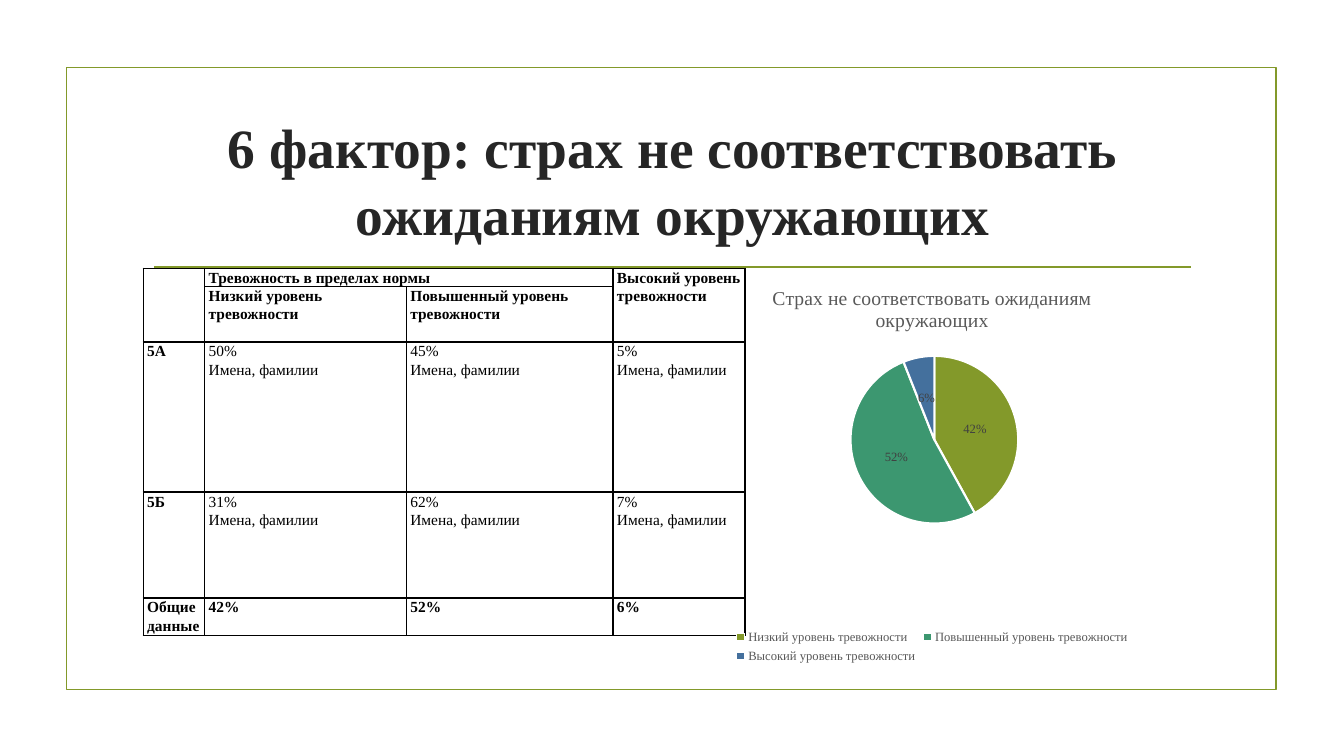
import pptx
import pptx.chart.data
import pptx.dml.color
import pptx.enum.chart
import pptx.enum.shapes
import pptx.enum.text
import pptx.oxml
import pptx.oxml.ns
import pptx.util
from pptx.util import Inches

RGBColor = pptx.dml.color.RGBColor
OLIVE = RGBColor(0x83, 0x99, 0x2A)
GREEN = RGBColor(0x3C, 0x97, 0x70)
BLUE = RGBColor(0x44, 0x70, 0x9D)
TITLE_COLOR = RGBColor(0x26, 0x26, 0x26)
CHART_TEXT = RGBColor(0x59, 0x59, 0x59)
LABEL_TEXT = RGBColor(0x40, 0x40, 0x40)
BLACK = RGBColor(0, 0, 0)
WHITE = RGBColor(0xFF, 0xFF, 0xFF)
FONT = "Times New Roman"

LOW, RAISED, HIGH = LEVELS = [
    "Низкий уровень тревожности",
    "Повышенный уровень тревожности",
    "Высокий уровень тревожности",
]
NAMES = "Имена, фамилии"
TABLE_ROWS = [
    ["", "Тревожность в пределах нормы", "", HIGH],
    ["", LOW, RAISED, ""],
    ["5А"] + [f"{share}\n{NAMES}" for share in ("50%", "45%", "5%")],
    ["5Б"] + [f"{share}\n{NAMES}" for share in ("31%", "62%", "7%")],
    ["Общие данные", "42%", "52%", "6%"],
]
COLUMN_WIDTHS = [0.61, 2, 2.05, 1.31]
ROW_HEIGHTS = [0.18, 0.55, 1.49, 1.05, 0.37]
CHART_TITLE = "Страх не соответствовать ожиданиям окружающих"


def style_font(font, size, color, bold=False):
    font.name = FONT
    font.size = pptx.util.Pt(size)
    font.bold = bold
    font.color.rgb = color


def add_frame(slide, left, top, width, height):
    """Draw the slide border and the rule under the title."""
    frame = slide.shapes.add_shape(
        pptx.enum.shapes.MSO_SHAPE.RECTANGLE,
        Inches(left), Inches(top), Inches(width), Inches(height))
    frame.shadow.inherit = False
    frame.fill.background()
    rule_y = Inches(top + 1.98)
    rule = slide.shapes.add_connector(
        pptx.enum.shapes.MSO_CONNECTOR.STRAIGHT,
        Inches(left + 0.87), rule_y, Inches(left + width - 0.85), rule_y)
    rule._element.spPr.append(pptx.oxml.parse_xml(
        f'<a:effectLst {pptx.oxml.ns.nsdecls("a")}/>'))
    for shape in (frame, rule):
        shape.line.color.rgb = OLIVE
        shape.line.width = pptx.util.Pt(1.25)


def fill_title(slide, left, top, width, height):
    title = slide.shapes.title
    title.left, title.top = Inches(left), Inches(top)
    title.width, title.height = Inches(width), Inches(height)
    text_frame = title.text_frame
    text_frame.word_wrap = True
    text_frame.auto_size = pptx.enum.text.MSO_AUTO_SIZE.NONE
    text_frame.vertical_anchor = pptx.enum.text.MSO_ANCHOR.MIDDLE
    paragraph = text_frame.paragraphs[0]
    paragraph.alignment = pptx.enum.text.PP_ALIGN.CENTER
    run = paragraph.add_run()
    run.text = "6 фактор: страх не соответствовать ожиданиям окружающих"
    style_font(run.font, 39.6, TITLE_COLOR, bold=True)


def add_cell_borders(cell):
    properties = cell._tc.get_or_add_tcPr()
    for position, side in enumerate(("lnL", "lnR", "lnT", "lnB")):
        properties.insert(position, pptx.oxml.parse_xml(
            f'<a:{side} {pptx.oxml.ns.nsdecls("a")} w="12700"><a:solidFill>'
            f'<a:srgbClr val="{BLACK}"/></a:solidFill></a:{side}>'))


def fill_cell(cell, text, bold):
    cell.margin_left = cell.margin_right = Inches(0.04)
    cell.margin_top = cell.margin_bottom = 0
    cell.fill.background()
    add_cell_borders(cell)
    for index, line in enumerate(text.split("\n")):
        text_frame = cell.text_frame
        paragraph = text_frame.add_paragraph() if index else text_frame.paragraphs[0]
        paragraph.line_spacing = 1.07
        style_font(paragraph.font, 11, BLACK, bold)
        if line:
            run = paragraph.add_run()
            run.text = line
            style_font(run.font, 11, BLACK, bold)


def add_anxiety_table(slide, left, top):
    table = slide.shapes.add_table(
        len(ROW_HEIGHTS), len(COLUMN_WIDTHS), Inches(left), Inches(top),
        Inches(sum(COLUMN_WIDTHS)), Inches(sum(ROW_HEIGHTS))).table
    table.first_row = table.horz_banding = False
    for column, width in zip(table.columns, COLUMN_WIDTHS):
        column.width = Inches(width)
    for row, height in zip(table.rows, ROW_HEIGHTS):
        row.height = Inches(height)
    for row_index, texts in enumerate(TABLE_ROWS):
        for column_index, text in enumerate(texts):
            bold = column_index == 0 or row_index not in (2, 3)
            fill_cell(table.cell(row_index, column_index), text, bold)
    for first, last in (((0, 0), (1, 0)), ((0, 1), (0, 2)), ((0, 3), (1, 3))):
        table.cell(*first).merge(table.cell(*last))


def set_plot_layout(chart, x, y, width, height):
    """Fix the inner plot area, in fractions of the chart."""
    plot_area = chart._chartSpace.chart.plotArea
    for layout in plot_area.findall(pptx.oxml.ns.qn("c:layout")):
        plot_area.remove(layout)
    plot_area.insert(0, pptx.oxml.parse_xml(
        f'<c:layout {pptx.oxml.ns.nsdecls("c")}><c:manualLayout>'
        '<c:layoutTarget val="inner"/><c:xMode val="edge"/><c:yMode val="edge"/>'
        f'<c:x val="{x}"/><c:y val="{y}"/><c:w val="{width}"/><c:h val="{height}"/>'
        '</c:manualLayout></c:layout>'))


def add_anxiety_chart(slide, left, top, width, height):
    data = pptx.chart.data.CategoryChartData()
    data.categories = LEVELS
    data.add_series(CHART_TITLE, (42, 52, 6))
    chart = slide.shapes.add_chart(
        pptx.enum.chart.XL_CHART_TYPE.PIE,
        Inches(left), Inches(top), Inches(width), Inches(height), data).chart
    style_font(chart.font, 10, BLACK)
    chart.has_title = True
    run = chart.chart_title.text_frame.paragraphs[0].add_run()
    run.text = CHART_TITLE
    style_font(run.font, 14, CHART_TEXT)
    chart.has_legend = True
    chart.legend.position = pptx.enum.chart.XL_LEGEND_POSITION.BOTTOM
    chart.legend.include_in_layout = False
    style_font(chart.legend.font, 9, CHART_TEXT)
    set_plot_layout(chart, 0.1, 0.22, 0.81, 0.42)

    plot = chart.plots[0]
    plot.vary_by_categories = True
    for index, color in enumerate((OLIVE, GREEN, BLUE)):
        point_format = plot.series[0].points[index].format
        point_format.fill.solid()
        point_format.fill.fore_color.rgb = color
        point_format.line.color.rgb = WHITE
        point_format.line.width = pptx.util.Pt(1.5)
    labels = plot.series[0].data_labels
    labels.show_percentage = True
    labels.show_value = False
    labels.number_format = "0%"
    labels.number_format_is_linked = False
    labels.position = pptx.enum.chart.XL_LABEL_POSITION.CENTER
    style_font(labels.font, 9, LABEL_TEXT)


def main():
    presentation = pptx.Presentation()
    presentation.slide_width = Inches(13.33)
    presentation.slide_height = Inches(7.5)
    slide = presentation.slides.add_slide(presentation.slide_layouts[5])
    add_frame(slide, 0.66, 0.67, 12, 6.17)
    fill_title(slide, 1.42, 1.07, 10.5, 1.43)
    add_anxiety_table(slide, 1.42, 2.66)
    add_anxiety_chart(slide, 6.98, 2.66, 4.53, 3.96)
    presentation.save("out.pptx")


if __name__ == "__main__":
    main()
